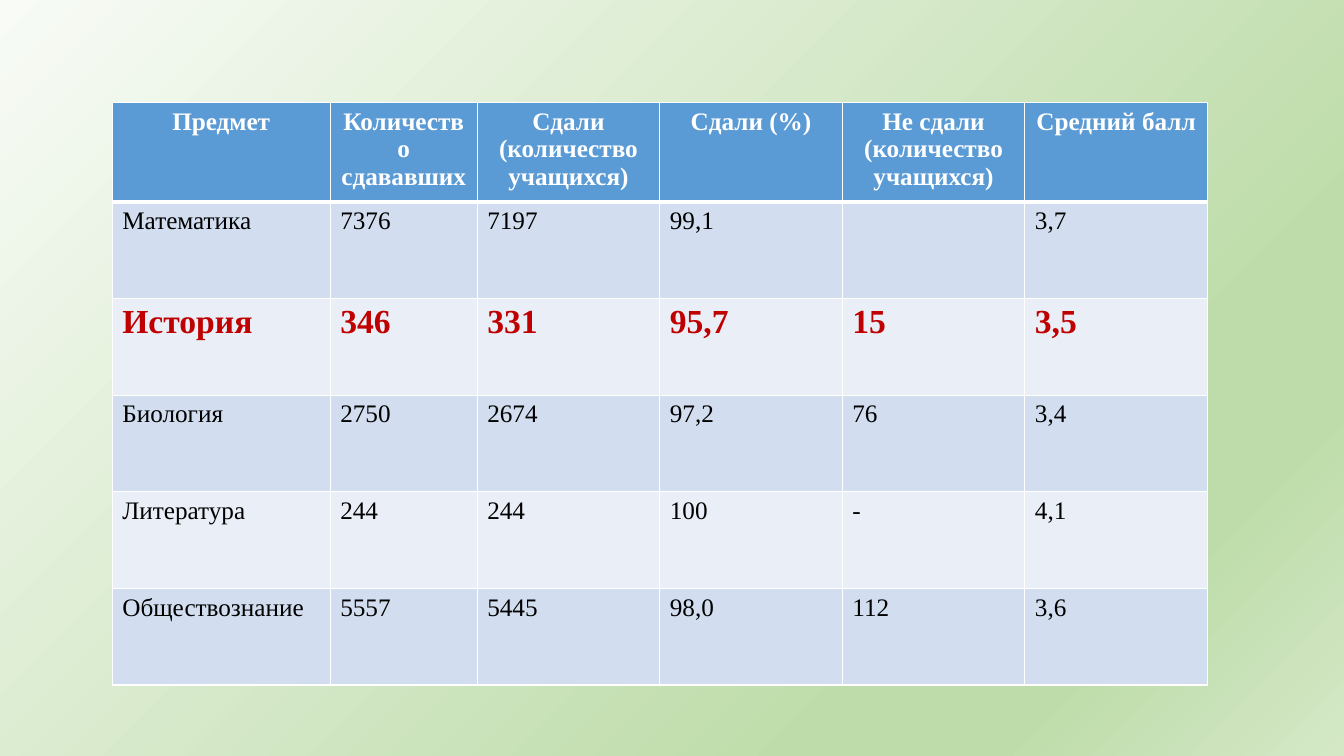
from lxml.etree import SubElement
from pptx import Presentation
from pptx.dml.color import RGBColor
from pptx.enum.text import PP_ALIGN
from pptx.oxml import parse_xml
from pptx.oxml.ns import nsdecls, qn
from pptx.util import Pt

COLORS = {
    "header": "5B9BD5",
    "odd_row": "D2DEEF",
    "even_row": "EAEFF7",
    "white": "FFFFFF",
    "black": "000000",
    "highlight": "C00000",
}
BACKGROUND_STOPS = [(0, "F8FBF6"), (74, "BEDCAA"), (83, "BEDCAA"), (100, "D4E8C6")]
COLUMN_WIDTHS = [155.7, 105] + [130.4] * 4
ROW_HEIGHTS = [71.2] + [69] * 5
HIGHLIGHTED_SUBJECT = "История"
RESULTS = [
    ["Предмет", "Количество сдававших", "Сдали (количество учащихся)",
     "Сдали (%)", "Не сдали (количество учащихся)", "Средний балл"],
    ["Математика", "7376", "7197", "99,1", "", "3,7"],
    ["История", "346", "331", "95,7", "15", "3,5"],
    ["Биология", "2750", "2674", "97,2", "76", "3,4"],
    ["Литература", "244", "244", "100", "-", "4,1"],
    ["Обществознание", "5557", "5445", "98,0", "112", "3,6"],
]


def write_text(cell, text, size=18, color="black", bold=False, align=PP_ALIGN.LEFT):
    para = cell.text_frame.paragraphs[0]
    para.alignment = align
    if text:
        span = para.add_run()
        span.text = text
        span.font.name = "Times New Roman"
        span.font.size = Pt(size)
        span.font.bold = bold
        span.font.color.rgb = RGBColor.from_string(COLORS[color])


def add_borders(cell, top=1, bottom=1):
    """Draw white cell borders; call before setting the fill, which must follow them."""
    properties = cell._tc.get_or_add_tcPr()
    for side, width in (("L", 1), ("R", 1), ("T", top), ("B", bottom)):
        line = SubElement(properties, qn(f"a:ln{side}"), w=str(Pt(width)))
        fill = SubElement(line, qn("a:solidFill"))
        SubElement(fill, qn("a:srgbClr"), val=COLORS["white"])


deck = Presentation()
deck.slide_width, deck.slide_height = Pt(960), Pt(540)
page = deck.slides.add_slide(deck.slide_layouts[6])

# Background gradient spreading from the top left corner
stops = "".join(
    f'<a:gs pos="{position * 1000}"><a:srgbClr val="{color}"/></a:gs>'
    for position, color in BACKGROUND_STOPS
)
background = parse_xml(
    f'<p:bg {nsdecls("p", "a")}><p:bgPr><a:gradFill rotWithShape="1">'
    f'<a:gsLst>{stops}</a:gsLst>'
    '<a:path path="circle"><a:fillToRect r="100000" b="100000"/></a:path>'
    '</a:gradFill><a:effectLst/></p:bgPr></p:bg>'
)
page.element.cSld.insert(0, background)

# Exam results table
table = page.shapes.add_table(
    len(RESULTS), len(COLUMN_WIDTHS), Pt(80.2), Pt(73.2),
    Pt(sum(COLUMN_WIDTHS)), Pt(sum(ROW_HEIGHTS)),
).table
for column, width in zip(table.columns, COLUMN_WIDTHS):
    column.width = Pt(width)

for index, (row, height, values) in enumerate(zip(table.rows, ROW_HEIGHTS, RESULTS)):
    row.height = Pt(height)
    if index == 0:
        fill_color = "header"
        text_format = {"color": "white", "bold": True, "align": PP_ALIGN.CENTER}
    else:
        fill_color = "odd_row" if index % 2 else "even_row"
        text_format = {}
    if values[0] == HIGHLIGHTED_SUBJECT:
        text_format = {"size": 24, "color": "highlight", "bold": True}

    for cell, text in zip(row.cells, values):
        add_borders(cell, top=3 if index == 1 else 1, bottom=3 if index == 0 else 1)
        cell.fill.solid()
        cell.fill.fore_color.rgb = RGBColor.from_string(COLORS[fill_color])
        write_text(cell, text, **text_format)

deck.save("out.pptx")
